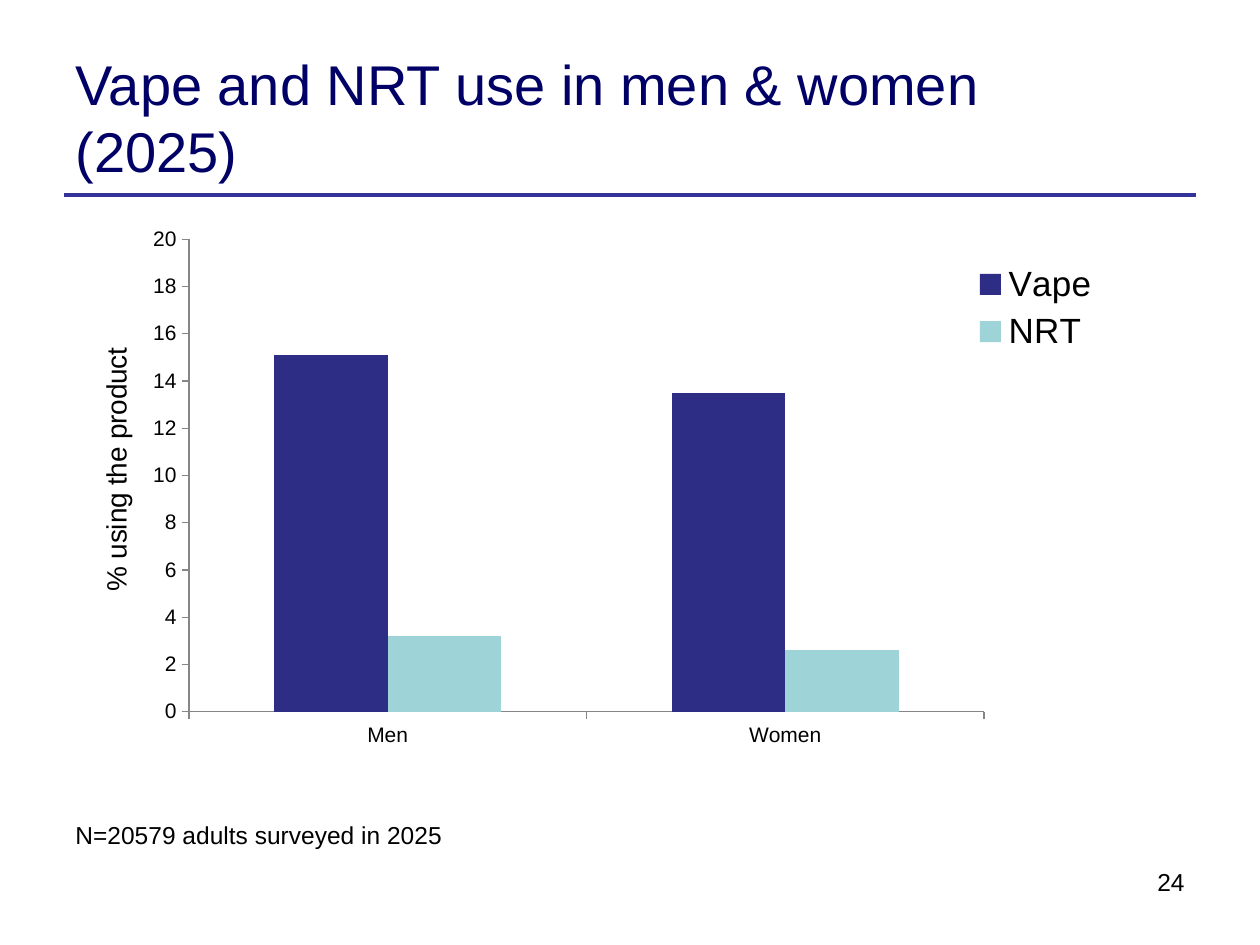
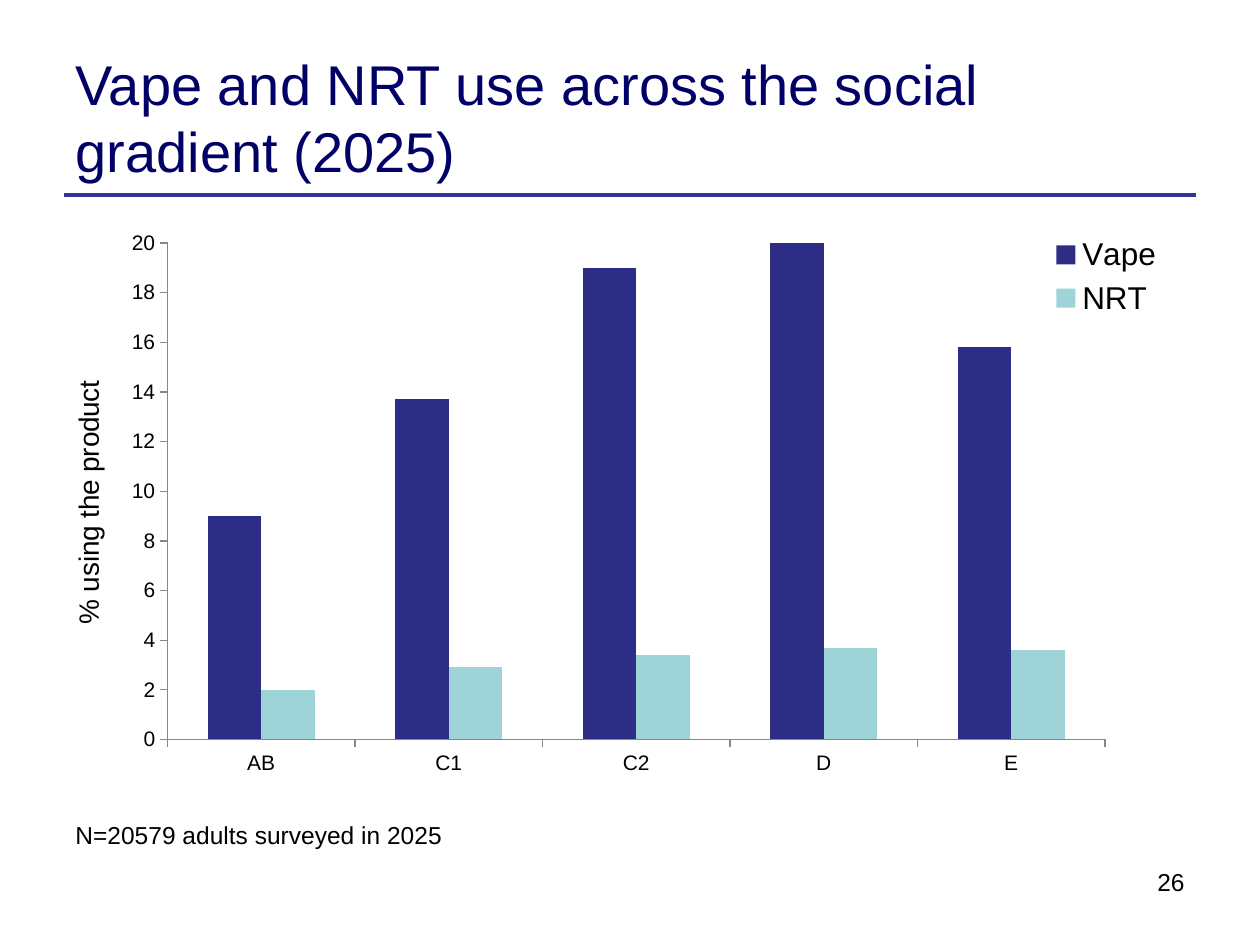
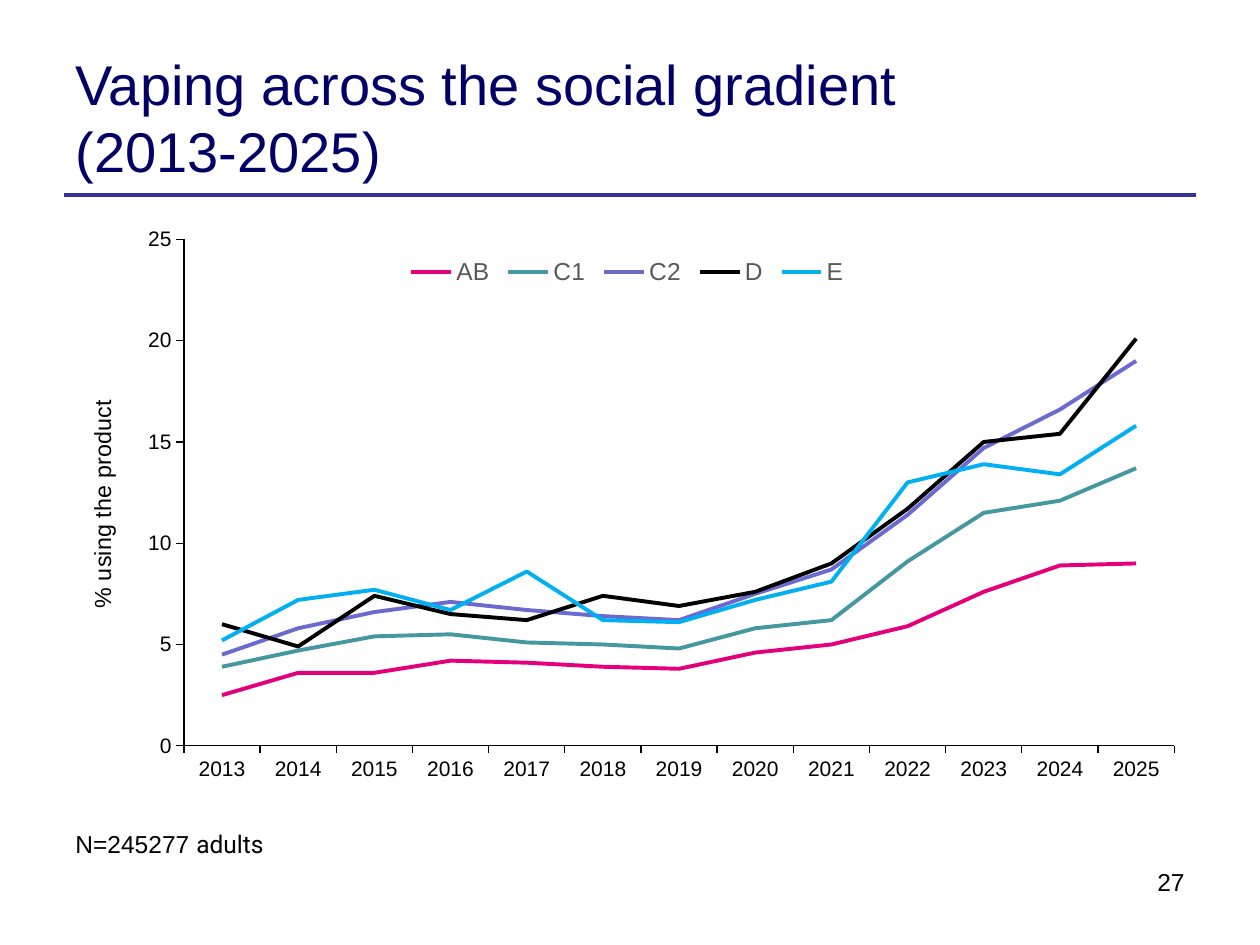
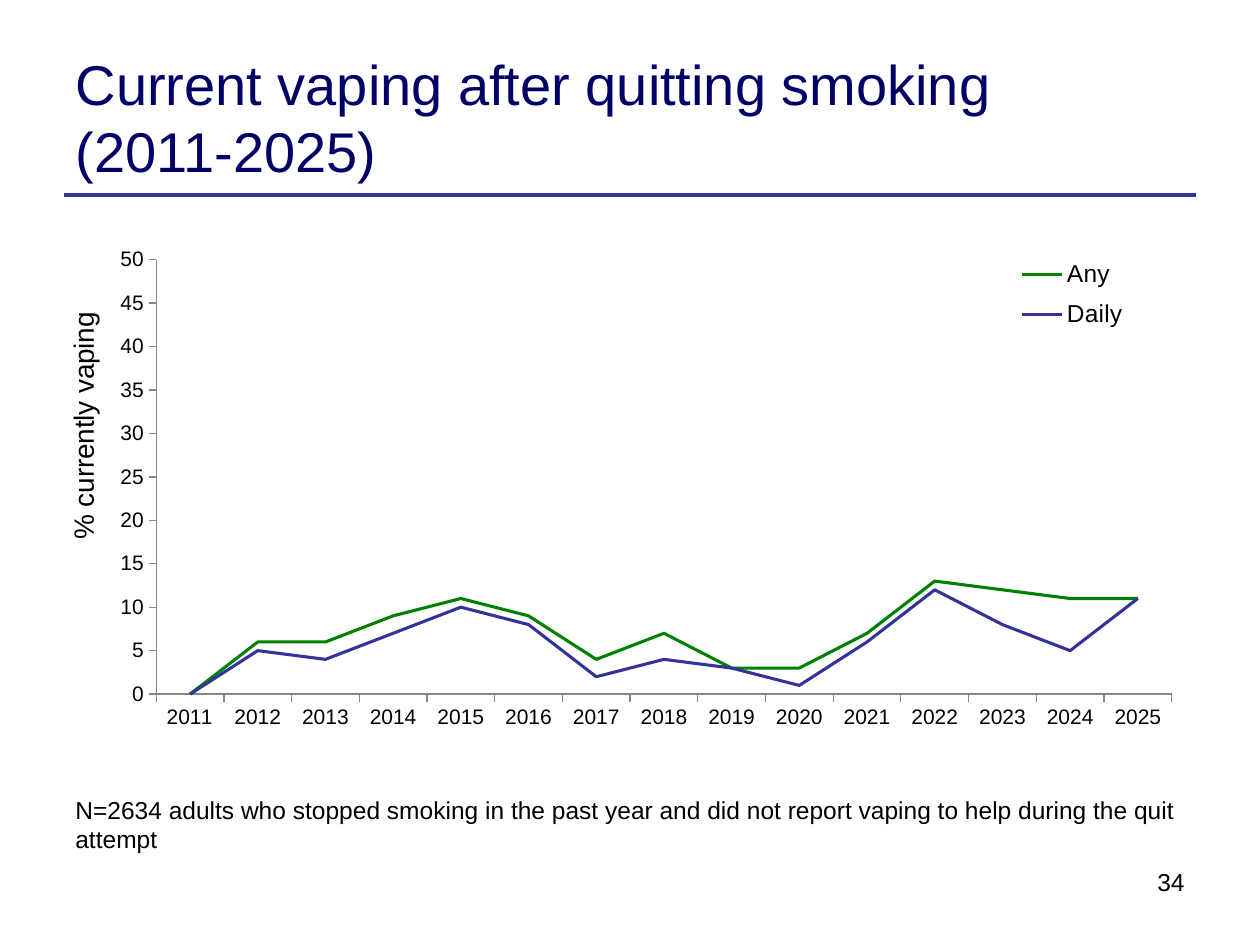
from lxml import etree
from pptx import Presentation, util as u
from pptx.chart import data
from pptx.dml import color
from pptx.enum import chart as kind, shapes, text
from pptx.oxml import ns

PX = 9144
FACE = "Arial"
INK, NAVY, RULE, GREY = "000000", "000066", "333399", "868686"
BARS = {"Vape": "2D2D86", "NRT": "9ED3D7"}


def px(*vals):
    return [u.Emu(val * PX) for val in vals]


def rgb(code):
    return color.RGBColor.from_string(code)


def put(item, **form):
    for name, val in form.items():
        setattr(item, name, val)


def ink(font, size, code=INK, face=FACE):
    put(font, size=u.Pt(size), name=face, bold=False)
    font.color.rgb = rgb(code)


def pen(line, code, width):
    line.color.rgb = rgb(code)
    line.width = u.Pt(width)


def pin(node, spot, frame, index, inner=False):
    for old in node.findall(ns.qn("c:layout")):
        node.remove(old)
    layout = etree.Element(ns.qn("c:layout"))
    node.insert(index, layout)
    manual = etree.SubElement(layout, ns.qn("c:manualLayout"))
    left, top, wide, high = frame
    parts = [("x", (spot[0] - left) / wide), ("y", (spot[1] - top) / high)]
    if len(spot) == 4:
        parts += [("w", spot[2] / wide), ("h", spot[3] / high)]
    marks = [("layoutTarget", "inner")] if inner else []
    marks += [("xMode", "edge"), ("yMode", "edge")] + parts
    for tag, val in marks:
        etree.SubElement(manual, ns.qn(f"c:{tag}"), val=str(val))


class Deck:
    def __init__(self):
        self.prs = Presentation()
        wide, high = px(1000, 750)
        put(self.prs, slide_width=wide, slide_height=high)
        self.slide = None

    def page(self, title, number):
        self.slide = self.prs.slides.add_slide(self.prs.slide_layouts[5])
        self.rule()
        self.title(title)
        self.note([(str(number), FACE)], (673, 683, 277, 52),
                  align=text.PP_ALIGN.RIGHT)

    def rule(self):
        line = self.slide.shapes.add_connector(
            shapes.MSO_CONNECTOR.STRAIGHT, *px(51, 155, 949, 155))
        pen(line.line, RULE, 2.25)
        etree.SubElement(line._element.spPr, ns.qn("a:effectLst"))

    def title(self, words):
        shape = self.slide.shapes.title
        left, top, wide, high = px(50, 30, 789, 125)
        put(shape, left=left, top=top, width=wide, height=high)
        frame = shape.text_frame
        put(frame, text=words, word_wrap=True,
            auto_size=text.MSO_AUTO_SIZE.NONE,
            vertical_anchor=text.MSO_ANCHOR.MIDDLE)
        para = frame.paragraphs[0]
        para.alignment = text.PP_ALIGN.LEFT
        ink(para.runs[0].font, 32, NAVY)

    def note(self, runs, box, wrap=True, align=text.PP_ALIGN.LEFT):
        frame = self.slide.shapes.add_textbox(*px(*box)).text_frame
        frame.word_wrap = wrap
        para = frame.paragraphs[0]
        para.alignment = align
        for words, face in runs:
            run = para.add_run()
            run.text = words
            ink(run.font, 14, face=face)

    def chart(self, form, cats, rows, box, plot):
        sheet = data.CategoryChartData()
        sheet.categories = cats
        for name, vals in rows.items():
            sheet.add_series(name, vals)
        chart = self.slide.shapes.add_chart(form, *px(*box), sheet).chart
        put(chart, has_title=False, has_legend=True)
        ink(chart.font, 12)
        pin(chart._chartSpace.chart.plotArea, plot, box, 0, True)
        return chart

    def axes(self, chart, box, top, step, label, size, spot, edge=GREY):
        for axis in (chart.category_axis, chart.value_axis):
            put(axis, has_major_gridlines=False,
                major_tick_mark=kind.XL_TICK_MARK.OUTSIDE,
                minor_tick_mark=kind.XL_TICK_MARK.NONE)
            ink(axis.tick_labels.font, 12)
            pen(axis.format.line, edge, 0.75)
        axis = chart.value_axis
        put(axis, minimum_scale=0, maximum_scale=top, major_unit=step)
        head = axis.axis_title
        head.text_frame.text = label
        ink(head.text_frame.paragraphs[0].runs[0].font, size)
        pin(head._element, spot, box, 1)

    def legend(self, chart, box, spot, size, code=INK,
               place=kind.XL_LEGEND_POSITION.RIGHT):
        key = chart.legend
        put(key, position=place, include_in_layout=False)
        ink(key.font, size, code)
        pin(key._element, spot, box, 1)

    def bars(self, cats, rows, box, plot, key, size, spot):
        chart = self.chart(kind.XL_CHART_TYPE.COLUMN_CLUSTERED,
                           cats, rows, box, plot)
        put(chart.plots[0], gap_width=150, overlap=0,
            vary_by_categories=False)
        for row in chart.series:
            row.format.fill.solid()
            row.format.fill.fore_color.rgb = rgb(BARS[row.name])
        self.axes(chart, box, 20, 2, "% using the product", 16, spot)
        self.legend(chart, box, key, size)
        self.note([("N=20579 adults surveyed in 2025", FACE)],
                  (50, 646, 312, 34), wrap=False)

    def lines(self, start, rows, hues, width, box, plot):
        cats = [str(year) for year in range(start, 2026)]
        chart = self.chart(kind.XL_CHART_TYPE.LINE, cats, rows, box, plot)
        chart.plots[0].vary_by_categories = False
        for row, hue in zip(chart.series, hues):
            row.smooth = False
            pen(row.format.line, hue, width)
        return chart


def main():
    deck = Deck()

    deck.page("Vape and NRT use in men & women (2025)", 24)
    deck.bars(["Men", "Women"],
              {"Vape": [15.1, 13.5], "NRT": [3.2, 2.6]},
              (50, 176, 900, 448), (150, 190, 631, 375),
              (762, 204, 120, 81), 20, (74, 272))

    deck.page("Vape and NRT use across the social gradient (2025)", 26)
    deck.bars(["AB", "C1", "C2", "D", "E"],
              {"Vape": [9, 13.7, 19, 20.1, 15.8],
               "NRT": [2, 2.9, 3.4, 3.7, 3.6]},
              (50, 177, 900, 448), (133, 193, 744, 394),
              (823, 182, 110, 75), 18, (52, 298))

    deck.page("Vaping across the social gradient (2013-2025)", 27)
    box = (50, 172, 900, 495)
    grades = {
        "AB": [2.5, 3.6, 3.6, 4.2, 4.1, 3.9, 3.8, 4.6, 5, 5.9, 7.6, 8.9, 9],
        "C1": [3.9, 4.7, 5.4, 5.5, 5.1, 5, 4.8, 5.8, 6.2, 9.1, 11.5, 12.1,
               13.7],
        "C2": [4.5, 5.8, 6.6, 7.1, 6.7, 6.4, 6.2, 7.5, 8.7, 11.4, 14.7,
               16.6, 19],
        "D": [6, 4.9, 7.4, 6.5, 6.2, 7.4, 6.9, 7.6, 9, 11.7, 15, 15.4, 20.1],
        "E": [5.2, 7.2, 7.7, 6.7, 8.6, 6.2, 6.1, 7.2, 8.1, 13, 13.9, 13.4,
              15.8],
    }
    hues = ["E5007B", "4597A0", "6B6BCF", INK, "00B0F0"]
    chart = deck.lines(2013, grades, hues, 2.25, box, (146, 190, 786, 402))
    deck.axes(chart, box, 25, 5, "% using the product", 13.3, (66, 314), INK)
    deck.legend(chart, box, (318, 202, 360, 28), 14, "595959",
                kind.XL_LEGEND_POSITION.BOTTOM)
    deck.note([("N=245277 ", FACE), ("adults", "Roboto")],
              (50, 653, 851, 34))

    deck.page("Current vaping after quitting smoking (2011-2025)", 34)
    box = (30, 177, 920, 456)
    habits = {
        "Any": [0, 6, 6, 9, 11, 9, 4, 7, 3, 3, 7, 13, 12, 11, 11],
        "Daily": [0, 5, 4, 7, 10, 8, 2, 4, 3, 1, 6, 12, 8, 5, 11],
    }
    chart = deck.lines(2011, habits, ["008000", RULE], 1.75, box,
                       (124, 206, 806, 345))
    deck.axes(chart, box, 50, 5, "% currently vaping", 16, (48, 244))
    deck.legend(chart, box, (796, 197, 110, 73), 14)
    deck.note([("N=2634 adults who stopped smoking in the past year and did "
                "not report vaping to help during the quit attempt", FACE)],
              (50, 626, 904, 57))

    deck.prs.save("out.pptx")


if __name__ == "__main__":
    main()
